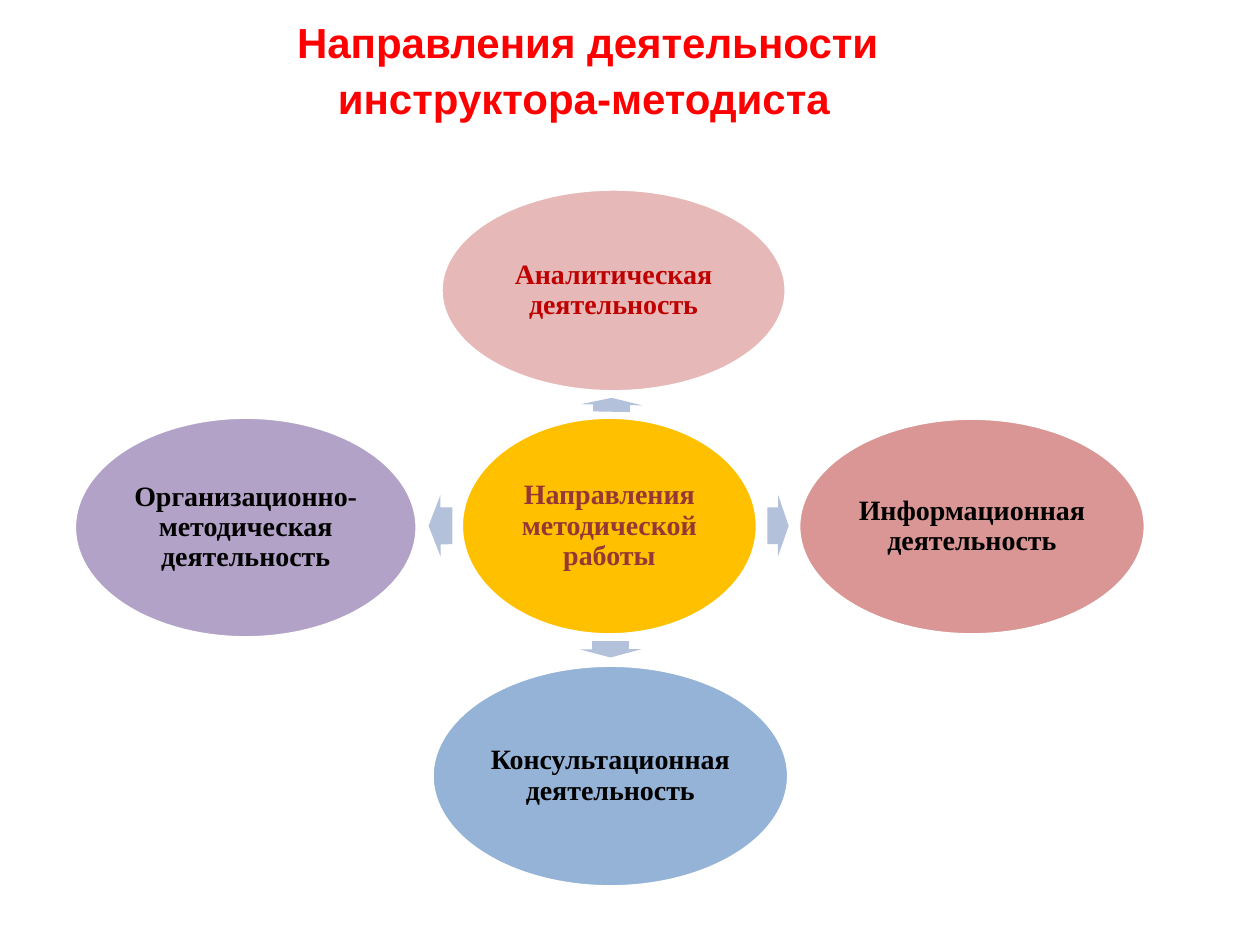
from dataclasses import dataclass

from pptx import Presentation
from pptx.dml.color import RGBColor
from pptx.enum.shapes import MSO_SHAPE
from pptx.enum.text import MSO_ANCHOR, MSO_AUTO_SIZE, PP_ALIGN
from pptx.util import Cm, Pt

ELLIPSE = MSO_SHAPE.OVAL
ARROW = MSO_SHAPE.RIGHT_ARROW
MIDDLE = MSO_ANCHOR.MIDDLE
CENTER = PP_ALIGN.CENTER
NO_AUTOFIT = MSO_AUTO_SIZE.NONE
TITLE_ONLY = 5

WHITE = "FFFFFF"
ARROW_FILL = "B3C1DB"
ARROW_BREADTH = 1.24
INSET = Cm(0.05)


@dataclass
class Activity:
    """An ellipse with its label; lengths in centimetres."""
    text: str
    left: float
    top: float
    width: float
    height: float
    fill: str
    text_color: str = "000000"


@dataclass
class Arrow:
    """An arrow pointing away from the centre; lengths in centimetres."""
    left: float
    top: float
    length: float
    rotation: float


ACTIVITIES = [
    Activity("Направления методической работы", 9.3, 8.41, 5.97, 4.39, "FFC000", "953735"),
    Activity("Информационная деятельность", 16.1, 8.43, 6.99, 4.37, "D99694"),
    Activity("Аналитическая деятельность", 8.89, 3.81, 6.96, 4.09, "E6B9B8", "C00000"),
    Activity("Консультационная деятельность", 8.71, 13.41, 7.19, 4.47, "95B3D7"),
    Activity("Организационно-методическая деятельность", 1.5, 8.41, 6.91, 4.45, "B3A2C7"),
]

ARROWS = [
    Arrow(15.47, 9.98, 0.43, 0.2),
    Arrow(12.19, 7.54, 0.28, 271.1),
    Arrow(12.14, 12.47, 0.33, 89.9),
    Arrow(8.64, 9.98, 0.48, 179.8),
]


def color(value: str) -> RGBColor:
    return RGBColor.from_string(value)


def set_attributes(target, values: dict) -> None:
    for name, value in values.items():
        setattr(target, name, value)


def format_font(font, name: str, size: int, text_color: str) -> None:
    set_attributes(font, {"name": name, "size": Pt(size), "bold": True})
    font.color.rgb = color(text_color)


def add_filled_shape(shapes, kind, box: tuple, fill: str):
    shape = shapes.add_shape(kind, *(Cm(length) for length in box))
    shape.shadow.inherit = False
    shape.fill.solid()
    shape.fill.fore_color.rgb = color(fill)
    return shape


def add_activity(shapes, activity: Activity) -> None:
    box = (activity.left, activity.top, activity.width, activity.height)
    shape = add_filled_shape(shapes, ELLIPSE, box, activity.fill)
    shape.line.color.rgb = color(WHITE)
    shape.line.width = Pt(2)
    frame = shape.text_frame
    set_attributes(frame, {
        "word_wrap": True, "vertical_anchor": MIDDLE,
        "margin_left": INSET, "margin_right": INSET,
        "margin_top": INSET, "margin_bottom": INSET,
    })
    paragraph = frame.paragraphs[0]
    set_attributes(paragraph, {"alignment": CENTER, "line_spacing": 0.9})
    run = paragraph.add_run()
    run.text = activity.text
    format_font(run.font, "Times New Roman", 16, activity.text_color)


def add_arrow(shapes, arrow: Arrow) -> None:
    box = (arrow.left, arrow.top, arrow.length, ARROW_BREADTH)
    shape = add_filled_shape(shapes, ARROW, box, ARROW_FILL)
    shape.line.fill.background()
    shape.adjustments[0] = 0.6
    shape.adjustments[1] = 0.5
    shape.rotation = arrow.rotation


def add_title(slide) -> None:
    title = slide.shapes.title
    set_attributes(title, {"left": Cm(-0.08), "top": Cm(-0.03),
                           "width": Cm(23.7), "height": Cm(2.29)})
    set_attributes(title.text_frame, {"word_wrap": True, "auto_size": NO_AUTOFIT,
                                      "vertical_anchor": MIDDLE})
    paragraph = title.text_frame.paragraphs[0]
    paragraph.alignment = CENTER
    # The large leading space sets the height of the first line
    lead = paragraph.add_run()
    lead.text = " "
    format_font(lead.font, "Arial", 40, "404040")
    for index, line in enumerate(("Направления деятельности ", "инструктора-методиста")):
        if index:
            paragraph.add_line_break()
        run = paragraph.add_run()
        run.text = line
        format_font(run.font, "Arial", 24, "FF0000")


def main() -> None:
    presentation = Presentation()
    presentation.slide_width = Cm(25.4)
    presentation.slide_height = Cm(19.05)
    slide = presentation.slides.add_slide(presentation.slide_layouts[TITLE_ONLY])
    add_title(slide)

    # Radial diagram
    diagram = slide.shapes.add_group_shape()
    for activity in ACTIVITIES:
        add_activity(diagram.shapes, activity)
    for arrow in ARROWS:
        add_arrow(diagram.shapes, arrow)

    presentation.save("out.pptx")


if __name__ == "__main__":
    main()
